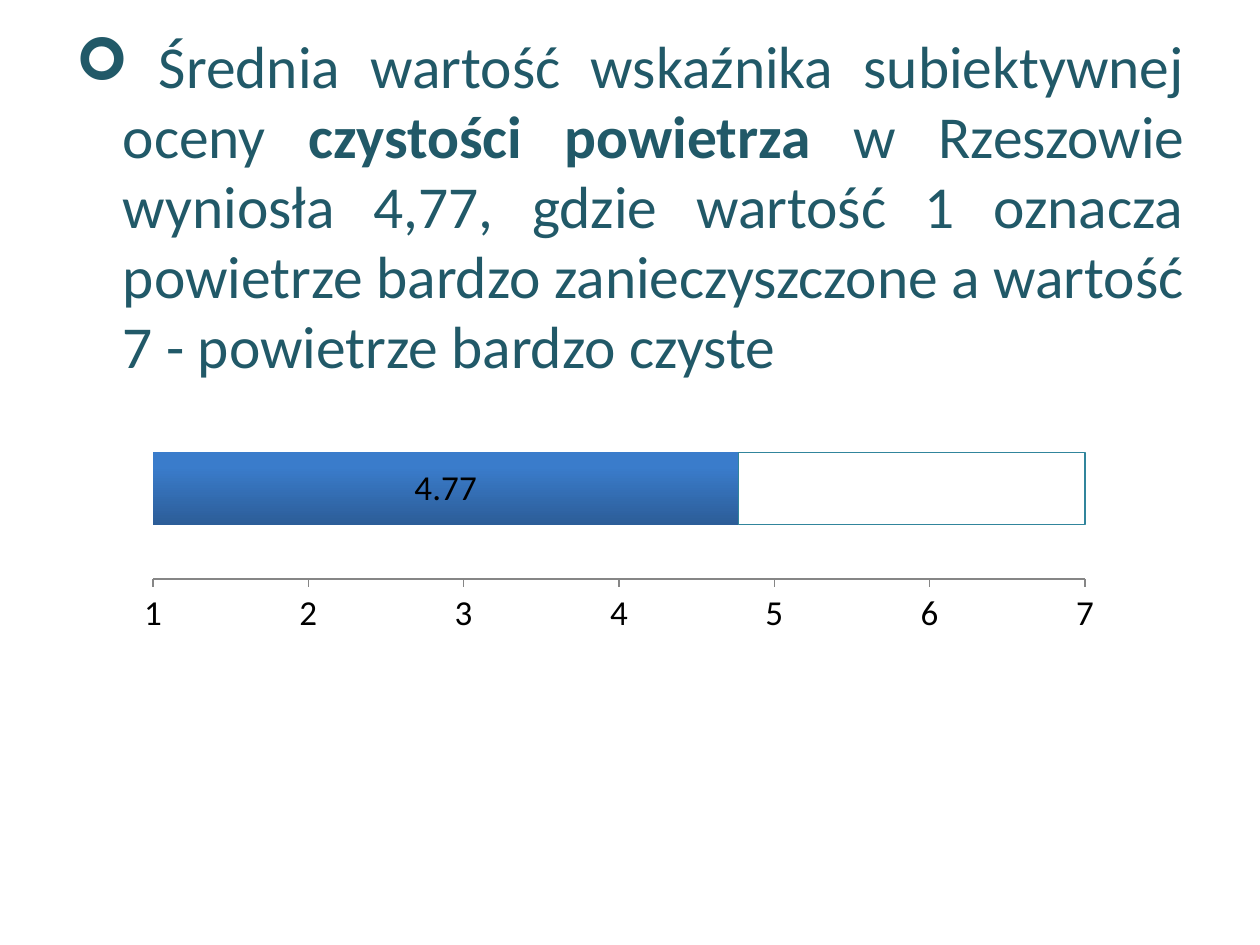
"""Builds a slide on the subjective rating of air cleanliness."""
import pptx
import pptx.chart.data
import pptx.dml.color
import pptx.enum.chart
import pptx.enum.text
import pptx.oxml
import pptx.util
from dataclasses import dataclass
from pptx.oxml.ns import nsdecls

Pt = pptx.util.Pt
Color = pptx.dml.color.RGBColor.from_string

STATEMENT = [
    (" Średnia wartość wskaźnika subiektywnej oceny ", False),
    ("czystości powietrza ", True),
    ("w Rzeszowie wyniosła 4,77, gdzie wartość 1 oznacza powietrze bardzo "
     "zanieczyszczone a wartość 7 - powietrze bardzo czyste", False),
]
RATING = {"categories": ["1"], "series": [("Series 1", [4.77]), ("Series 2", [7])]}
SCALE = (1, 7)
BULLET = "➢"
TEXT_AREA = (36, 15, 648, 467)
CHART_AREA = (70.5, 224.5, 566.5, 142)
PLOT_AREA = {"x": 0.03, "y": 0.02, "w": 0.94, "h": 0.73}


@dataclass(frozen=True)
class Theme:
    font: str = "Calibri"
    body_size: int = 34
    chart_size: int = 20
    body: str = "215968"
    chart: str = "000000"
    bar_top: str = "3A7CCB"
    bar_bottom: str = "2C5D98"
    outline: str = "31859C"
    axis: str = "868686"


THEME = Theme()


def style_font(font, size, color, bold=False):
    font.name, font.size, font.bold = THEME.font, Pt(size), bold
    font.color.rgb = Color(color)


def add_span(para, text, **style):
    span = para.add_run()
    span.text = text
    style_font(span.font, **style)


def place(box, area):
    box.left, box.top, box.width, box.height = map(Pt, area)


def write_statement(box):
    place(box, TEXT_AREA)
    frame = box.text_frame
    frame.word_wrap = True
    frame.auto_size = pptx.enum.text.MSO_AUTO_SIZE.NONE
    para = frame.paragraphs[0]
    para.alignment = pptx.enum.text.PP_ALIGN.JUSTIFY
    para.line_spacing = 0.98
    properties = para._p.get_or_add_pPr()
    properties.set("marL", str(Pt(27)))
    properties.set("indent", str(-Pt(27)))
    for tag, name, value in (("buFont", "typeface", "Wingdings"), ("buChar", "char", BULLET)):
        properties.append(pptx.oxml.parse_xml(f'<a:{tag} {nsdecls("a")} {name}="{value}"/>'))
    for text, bold in STATEMENT:
        add_span(para, text, size=THEME.body_size, color=THEME.body, bold=bold)


def set_plot_area(chart):
    modes = '<c:layoutTarget val="inner"/><c:xMode val="edge"/><c:yMode val="edge"/>'
    sizes = "".join(f'<c:{key} val="{value}"/>' for key, value in PLOT_AREA.items())
    layout = pptx.oxml.parse_xml(
        f'<c:layout {nsdecls("c")}><c:manualLayout>{modes}{sizes}</c:manualLayout></c:layout>')
    plot_area = chart._chartSpace.chart.plotArea
    for old in plot_area.findall(layout.tag):
        plot_area.remove(old)
    plot_area.insert(0, layout)


def style_axes(chart):
    chart.category_axis.visible = False
    axis = chart.value_axis
    axis.minimum_scale, axis.maximum_scale = SCALE
    axis.major_unit = 1
    axis.has_major_gridlines = False
    axis.major_tick_mark = pptx.enum.chart.XL_TICK_MARK.OUTSIDE
    axis.tick_labels.number_format = "General"
    axis.tick_labels.number_format_is_linked = False
    axis.format.line.color.rgb = Color(THEME.axis)
    axis.format.line.width = Pt(0.75)


def style_bars(plot):
    plot.gap_width, plot.overlap = 150, 100
    plot.vary_by_categories = False
    score, rest = plot.series
    score.format.fill.gradient()
    score.format.fill.gradient_angle = 90
    bottom, top = score.format.fill.gradient_stops
    bottom.color.rgb, top.color.rgb = Color(THEME.bar_bottom), Color(THEME.bar_top)
    bottom.position, top.position = 0, 0.8
    score.data_labels.show_value = True
    style_font(score.data_labels.font, THEME.chart_size, THEME.chart)
    remainder = rest.points[0].format
    remainder.fill.background()
    remainder.line.color.rgb = Color(THEME.outline)
    remainder.line.width = Pt(0.75)


def add_rating_chart(page):
    data = pptx.chart.data.CategoryChartData()
    data.categories = RATING["categories"]
    for name, values in RATING["series"]:
        data.add_series(name, values)
    kind = pptx.enum.chart.XL_CHART_TYPE.BAR_STACKED
    chart = page.shapes.add_chart(kind, *map(Pt, CHART_AREA), data).chart
    chart.has_legend = False
    chart.has_title = False
    style_font(chart.font, THEME.chart_size, THEME.chart)
    style_axes(chart)
    style_bars(chart.plots[0])
    set_plot_area(chart)


def main():
    deck = pptx.Presentation()
    deck.slide_width, deck.slide_height = Pt(720), Pt(540)
    page = deck.slides.add_slide(deck.slide_layouts[1])
    title, body = page.placeholders
    title.element.getparent().remove(title.element)
    write_statement(body)
    add_rating_chart(page)
    deck.save("out.pptx")


if __name__ == "__main__":
    main()
